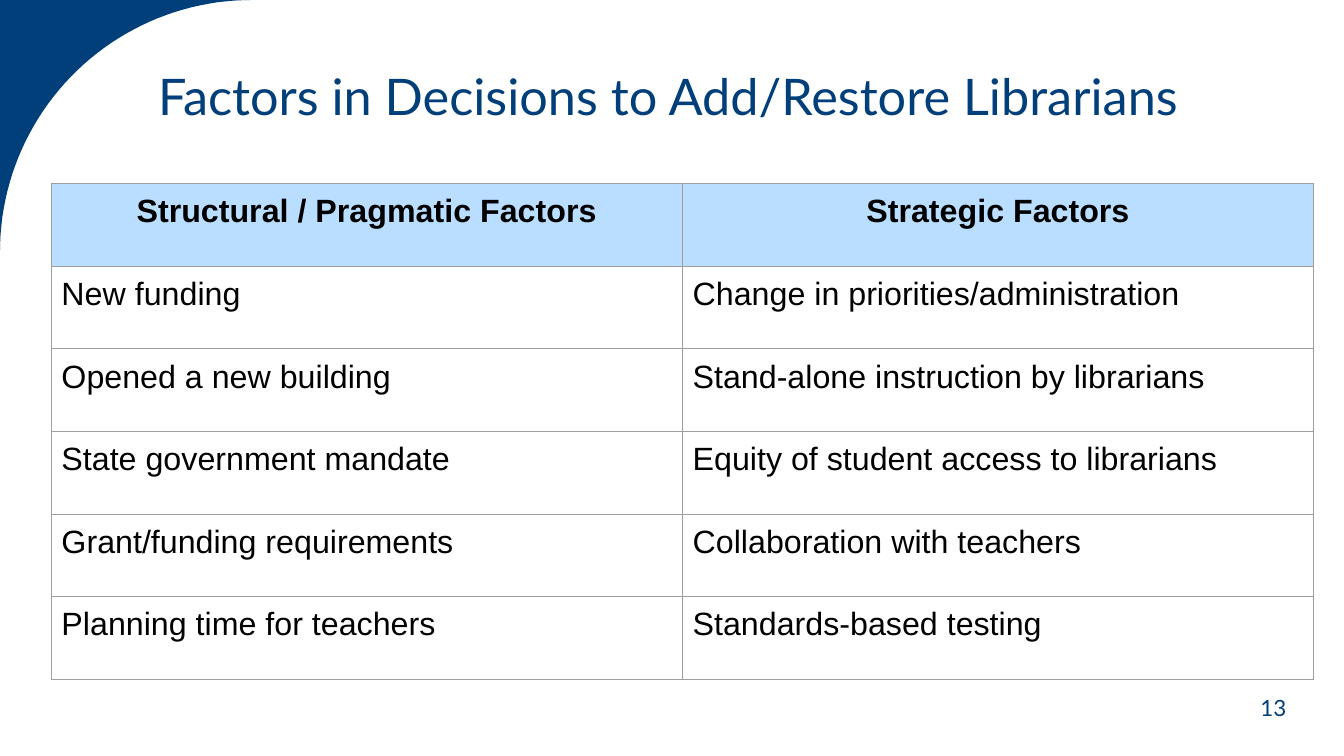
from math import cos, radians, sin

from lxml import etree
from pptx import Presentation
from pptx.dml.color import RGBColor
from pptx.enum import text as t
from pptx.oxml import ns
from pptx.util import Inches, Pt

COLOURS = {"navy": "003F79", "header": "73BDFF", "grid": "9E9E9E", "black": "000000"}
HEADER_ALPHA = 49000
FACTORS = [
    ("Structural / Pragmatic Factors", "Strategic Factors"),
    ("New funding", "Change in priorities/administration"),
    ("Opened a new building", "Stand-alone instruction by librarians"),
    ("State government mandate", "Equity of student access to librarians"),
    ("Grant/funding requirements", "Collaboration with teachers"),
    ("Planning time for teachers", "Standards-based testing"),
]


def colour(name):
    """Return a named colour as an RGB value."""
    return RGBColor.from_string(COLOURS[name])


def write(frame, words, *, size, font, ink, bold=False,
          align=t.PP_ALIGN.LEFT, spacing=None):
    """Write one formatted paragraph into a text frame."""
    para = frame.paragraphs[0]
    para.alignment = align
    para.line_spacing = spacing
    span = para.add_run()
    span.text = words
    span.font.size = Pt(size)
    span.font.name = font
    span.font.bold = bold
    span.font.color.rgb = colour(ink)


def add_label(page, words, left, top, width, height, **style):
    """Add a vertically centred navy text box."""
    box = page.shapes.add_textbox(Inches(left), Inches(top), Inches(width), Inches(height))
    frame = box.text_frame
    frame.word_wrap = True
    frame.vertical_anchor = t.MSO_ANCHOR.MIDDLE
    write(frame, words, font="Lato", ink="navy", **style)


def add_corner(page, radius):
    """Fill the top-left corner outside a quarter circle."""
    curve = [(radius * (1 - cos(radians(angle))), radius * (1 - sin(radians(angle))))
             for angle in range(0, 91, 2)]
    builder = page.shapes.build_freeform(0, 0, scale=Inches(1) / 1000)
    builder.add_line_segments([(x * 1000, y * 1000) for x, y in curve])
    corner = builder.convert_to_shape()
    corner.shadow.inherit = False
    corner.fill.solid()
    corner.fill.fore_color.rgb = colour("navy")
    corner.line.fill.background()


def add_borders(cell):
    """Draw a thin grey line on each side of a cell."""
    properties = cell._tc.get_or_add_tcPr()
    for index, side in enumerate(("lnL", "lnR", "lnT", "lnB")):
        line = etree.Element(ns.qn(f"a:{side}"), w=str(Pt(0.75)))
        fill = etree.SubElement(line, ns.qn("a:solidFill"))
        etree.SubElement(fill, ns.qn("a:srgbClr"), val=COLOURS["grid"])
        properties.insert(index, line)


def format_cell(cell, words, is_header):
    """Fill, frame and write one table cell."""
    cell.margin_left = cell.margin_right = Inches(0.1)
    cell.margin_top = cell.margin_bottom = Inches(0.1)
    if is_header:
        cell.fill.solid()
        cell.fill.fore_color.rgb = colour("header")
        shade = cell._tc.tcPr.find(".//" + ns.qn("a:srgbClr"))
        etree.SubElement(shade, ns.qn("a:alpha"), val=str(HEADER_ALPHA))
    else:
        cell.fill.background()
    add_borders(cell)
    write(cell.text_frame, words, size=23, font="Arial", ink="black", bold=is_header,
          align=t.PP_ALIGN.CENTER if is_header else t.PP_ALIGN.LEFT)


def add_factor_table(page, rows, left, top, column_width, row_height):
    """Add the table of factors with a shaded header row."""
    columns = len(rows[0])
    table = page.shapes.add_table(
        len(rows), columns, Inches(left), Inches(top),
        Inches(column_width * columns), Inches(row_height * len(rows))).table
    table.horz_banding = False
    for row_index, row in enumerate(rows):
        for column_index, words in enumerate(row):
            format_cell(table.cell(row_index, column_index), words, row_index == 0)


def main():
    """Build and save the slide."""
    deck = Presentation()
    deck.slide_width, deck.slide_height = Inches(13.33), Inches(7.5)
    page = deck.slides.add_slide(deck.slide_layouts[6])
    add_corner(page, 2.5)
    add_label(page, "Factors in Decisions to Add/Restore Librarians",
              1.47, 0.38, 11.16, 1.2, size=36, spacing=0.9)
    add_label(page, "13", 11.92, 6.54, 1.42, 0.96, size=16, align=t.PP_ALIGN.CENTER)
    add_factor_table(page, FACTORS, 0.51, 1.82, 6.26, 0.82)
    deck.save("out.pptx")


if __name__ == "__main__":
    main()
